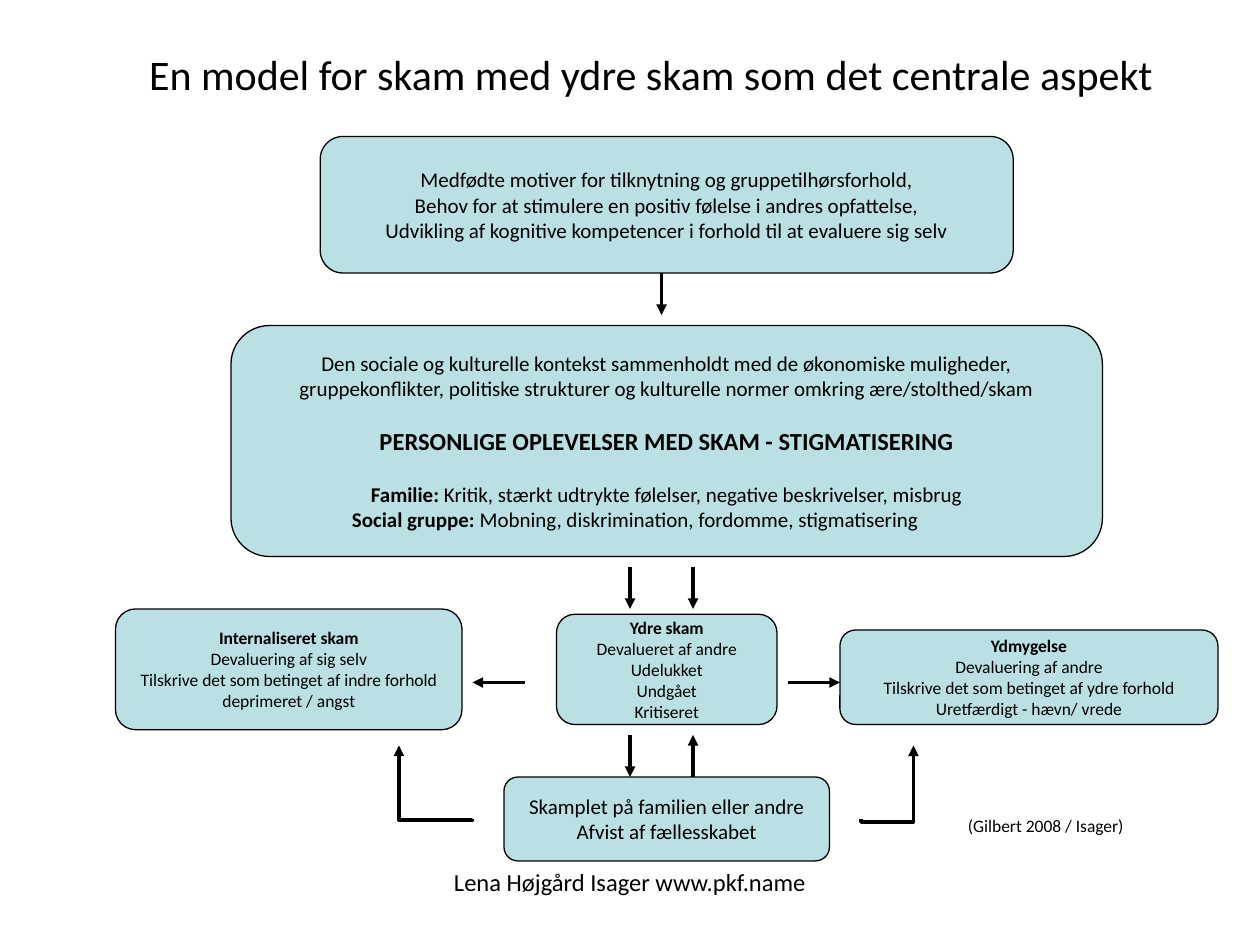
"""Build a one-slide flow model of shame with external shame at its centre."""
from pptx import Presentation
from pptx.dml.color import RGBColor
from pptx.enum.shapes import MSO_CONNECTOR as Connector, MSO_SHAPE as Shape
from pptx.enum.text import MSO_ANCHOR as Anchor, MSO_AUTO_SIZE as AutoSize, PP_ALIGN as Align
from pptx.oxml.ns import qn
from pptx.util import Pt
from lxml.etree import SubElement

BLACK = RGBColor(0x00, 0x00, 0x00)
PALE_TEAL = RGBColor(0xBB, 0xE0, 0xE3)


def write_line(frame, text, *, lead="", size=12, bold=False, align=Align.CENTER,
               gap=0, right_indent=0, font="Calibri", color=BLACK):
    first = frame.paragraphs[0]
    paragraph = frame.add_paragraph() if first.runs else first
    paragraph.alignment = align
    paragraph.space_before = Pt(gap)
    if right_indent:
        paragraph._p.get_or_add_pPr().set("marR", str(Pt(right_indent)))
    for content, heavy in ((lead, True), (text, bold)):
        if content:
            run = paragraph.add_run()
            run.text = content
            run.font.name = font
            run.font.size = Pt(size)
            run.font.bold = heavy
            run.font.color.rgb = color


class SlideBuilder:
    def __init__(self, slide, fill=PALE_TEAL, ink=BLACK):
        self.slide = slide
        self.fill = fill
        self.ink = ink

    def title(self, text, left, top, width, height):
        shape = self.slide.shapes.title
        shape.left, shape.top, shape.width, shape.height = map(Pt, (left, top, width, height))
        frame = shape.text_frame
        frame.auto_size = AutoSize.NONE
        frame.vertical_anchor = Anchor.MIDDLE
        write_line(frame, text, size=24)

    def box(self, left, top, width, height):
        shape = self.slide.shapes.add_shape(
            Shape.ROUNDED_RECTANGLE, *map(Pt, (left, top, width, height)))
        shape.shadow.inherit = False
        shape.fill.solid()
        shape.fill.fore_color.rgb = self.fill
        shape.line.color.rgb = self.ink
        shape.line.width = Pt(0.75)
        frame = shape.text_frame
        frame.word_wrap = True
        frame.vertical_anchor = Anchor.MIDDLE
        return frame

    def list_box(self, place, lines, heading="", size=12):
        frame = self.box(*place)
        if heading:
            write_line(frame, heading, size=size, bold=True)
        for line in lines:
            write_line(frame, line, size=size)

    def label(self, text, left, top, width, height, wrap=True, **style):
        shape = self.slide.shapes.add_textbox(*map(Pt, (left, top, width, height)))
        shape.text_frame.word_wrap = wrap
        write_line(shape.text_frame, text, **style)

    def arrow(self, start, end, kind=Connector.STRAIGHT):
        connector = self.slide.shapes.add_connector(kind, *map(Pt, (*start, *end)))
        connector.line.color.rgb = self.ink
        connector.line.width = Pt(2)
        line = connector.line._get_or_add_ln()
        SubElement(line, qn("a:tailEnd"), type="triangle")
        SubElement(connector._element.spPr, qn("a:effectLst"))
        return connector

    def bent_arrow(self, start, end, degrees, bend):
        properties = self.arrow(start, end, Connector.ELBOW)._element.spPr
        properties.find(qn("a:xfrm")).set("rot", str(degrees * 60000))
        geometry = properties.find(qn("a:prstGeom"))
        adjustments = geometry.find(qn("a:avLst"))
        if adjustments is None:
            adjustments = SubElement(geometry, qn("a:avLst"))
        SubElement(adjustments, qn("a:gd"), name="adj1", fmla=f"val {bend}")


def main():
    presentation = Presentation()
    presentation.slide_width, presentation.slide_height = Pt(720), Pt(540)
    builder = SlideBuilder(presentation.slides.add_slide(presentation.slide_layouts[5]))
    builder.title("En model for skam med ydre skam som det centrale aspekt", 24, 18, 696, 48)

    builder.list_box((183, 78, 396, 78), (
        "Medfødte motiver for tilknytning og gruppetilhørsforhold,",
        "Behov for at stimulere en positiv følelse i andres opfattelse,",
        "Udvikling af kognitive kompetencer i forhold til at evaluere sig selv"))

    context = builder.box(132, 186, 498, 132)
    write_line(context, "Den sociale og kulturelle kontekst sammenholdt med "
                        "de økonomiske muligheder,")
    write_line(context, "gruppekonflikter, politiske strukturer og kulturelle normer "
                        "omkring ære/stolthed/skam")
    write_line(context, "PERSONLIGE OPLEVELSER MED SKAM - STIGMATISERING",
               size=14, bold=True, gap=14.6)
    write_line(context, " Kritik, stærkt udtrykte følelser, negative beskrivelser, misbrug",
               lead="Familie:", gap=14.6)
    write_line(context, " Mobning, diskrimination, fordomme, stigmatisering",
               lead="Social gruppe:", right_indent=36)

    builder.list_box((66, 348, 198, 69), (
        "Devaluering af sig selv", "Tilskrive det som betinget af indre forhold",
        "deprimeret / angst"), "Internaliseret skam", 10)
    builder.list_box((318, 351, 126, 63), (
        "Devalueret af andre", "Udelukket", "Undgået", "Kritiseret"), "Ydre skam", 10)
    builder.list_box((480, 360, 216, 54), (
        "Devaluering af andre", "Tilskrive det som betinget af ydre forhold",
        "Uretfærdigt - hævn/ vrede"), "Ydmygelse", 10)
    builder.list_box((288, 444, 186, 48), (
        "Skamplet på familien eller andre", "Afvist af fællesskabet"))

    for start, end in (
            ((378, 156), (378, 180)),
            ((360, 324), (360, 348)), ((396, 324), (396, 348)),
            ((450, 390), (480, 390)), ((300, 390), (270, 390)),
            ((360, 420), (360, 444)), ((396, 444), (396, 420))):
        builder.arrow(start, end)
    builder.bent_arrow((486, 432), (528, 462), 270, -4200)
    builder.bent_arrow((270, 426), (228, 468), 90, -1500)

    builder.label("(Gilbert 2008 / Isager)", 546, 462, 104, 19.5,
                  wrap=False, size=10, align=Align.LEFT)
    builder.label("Lena Højgård Isager www.pkf.name", 246, 492, 228, 36, size=14)
    presentation.save("out.pptx")


if __name__ == "__main__":
    main()
